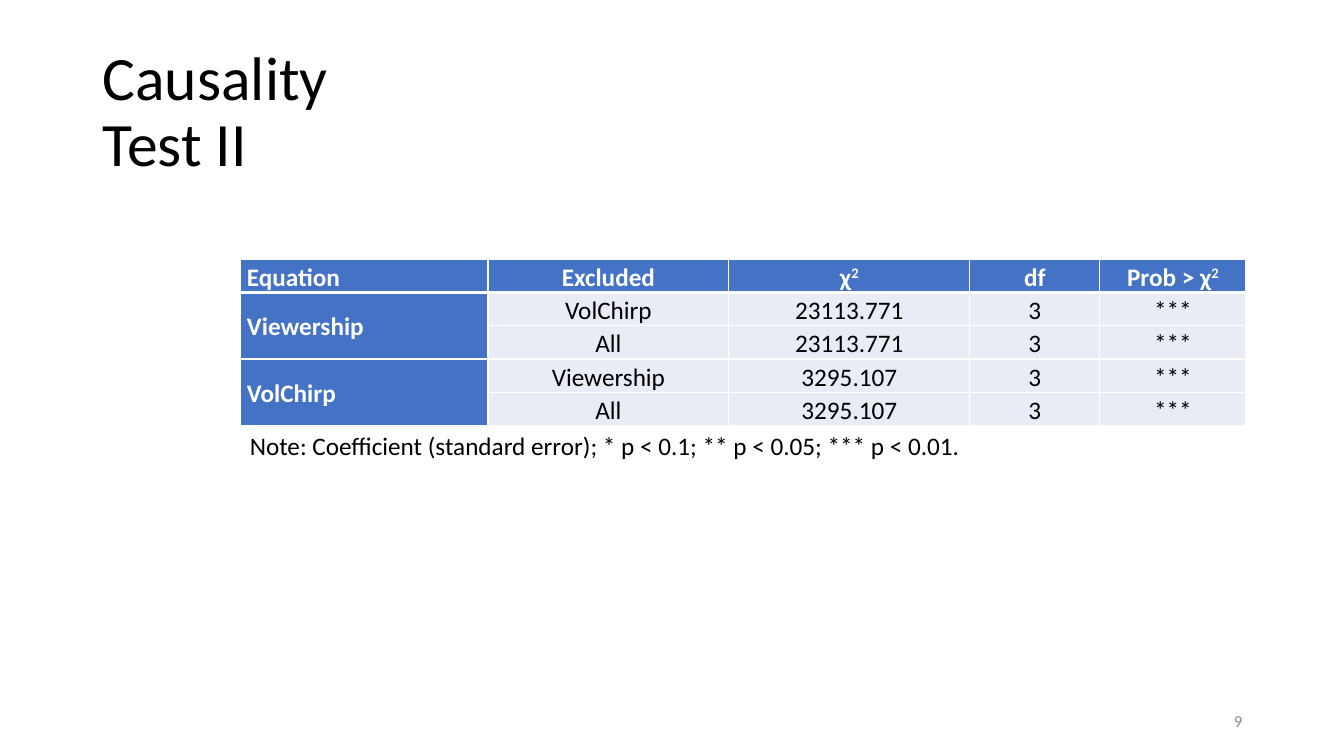
from dataclasses import dataclass

from lxml import etree
from pptx import Presentation
from pptx import util as u
from pptx.dml.color import RGBColor
from pptx.enum import text
from pptx.oxml import ns


@dataclass(frozen=True)
class Theme:
    font: str = "Calibri"
    ink: str = "000000"
    white: str = "FFFFFF"
    blue: str = "4472C4"
    pale: str = "E9EBF5"
    gray: str = "8C8C8C"
    title: int = 44
    body: int = 18
    small: int = 12


THEME = Theme()
WIDE, HIGH = u.Inches(13.33), u.Inches(7.5)
LEFT = 17.85
COLS = [2.46, 2.39, 2.39, 1.29, 1.45]
ROWS = [
    ["Equation", "Excluded", "χ^2", "df", "Prob > χ^2"],
    ["Viewership", "VolChirp", "23113.771", "3", "***"],
    ["", "All", "23113.771", "3", "***"],
    ["VolChirp", "Viewership", "3295.107", "3", "***"],
    ["", "All", "3295.107", "3", "***"],
]


def area(left, top, width, height):
    shares = zip((left, top, width, height), (WIDE, HIGH, WIDE, HIGH))
    return [round(side * share / 100) for share, side in shares]


def style(para, size, color, align="LEFT", bold=False):
    para.alignment = getattr(text.PP_ALIGN, align)
    font = para.font
    font.name, font.size, font.bold = THEME.font, u.Pt(size), bold
    font.color.rgb = RGBColor.from_string(color)


def label(slide, box, words, size, color, align="LEFT", anchor="MIDDLE", wrap=True):
    frame = slide.shapes.add_textbox(*area(*box)).text_frame
    frame.word_wrap = wrap
    frame.vertical_anchor = getattr(text.MSO_ANCHOR, anchor)
    para = frame.paragraphs[0]
    para.text = words
    style(para, size, color, align)
    return para


def border(cell, side, width):
    props = cell._tc.get_or_add_tcPr()
    line = etree.SubElement(props, ns.qn("a:ln" + side), w=str(u.Pt(width)))
    fill = etree.SubElement(line, ns.qn("a:solidFill"))
    etree.SubElement(fill, ns.qn("a:srgbClr"), val=THEME.white)


def write(cell, words, row, col):
    head = row == 0 or col == 0
    cell.margin_left = cell.margin_right = u.Inches(0.07)
    cell.margin_top = cell.margin_bottom = 0
    if row and col == 0:
        cell.vertical_anchor = text.MSO_ANCHOR.MIDDLE
    for side in "LRTB":
        thick = (row, side) in ((0, "B"), (1, "T"))
        border(cell, side, 3 if thick else 1)
    cell.fill.solid()
    cell.fill.fore_color.rgb = RGBColor.from_string(THEME.blue if head else THEME.pale)
    para = cell.text_frame.paragraphs[0]
    style(para, THEME.body, THEME.white if head else THEME.ink,
          "CENTER" if col else "LEFT", head)
    para.line_spacing = 1.1
    para.space_before = para.space_after = u.Pt(3)
    base, mark, power = words.partition("^")
    if base:
        para.add_run().text = base
    if mark:
        run = para.add_run()
        run.text = power
        run._r.get_or_add_rPr().set("baseline", "30000")


def grid(slide, box):
    table = slide.shapes.add_table(len(ROWS), len(COLS), *area(*box)).table
    for col, width in zip(table.columns, COLS):
        col.width = u.Inches(width)
    for r, row in enumerate(ROWS):
        for c, words in enumerate(row):
            write(table.cell(r, c), words, r, c)
    for top in (1, 3):
        table.cell(top, 0).merge(table.cell(top + 1, 0))


def main():
    deck = Presentation()
    deck.slide_width, deck.slide_height = WIDE, HIGH
    slide = deck.slides.add_slide(deck.slide_layouts[6])
    title = label(slide, (6.9, 5.33, 21.9, 19.33), "Causality Test II",
                  THEME.title, THEME.ink)
    title.line_spacing = 0.9
    label(slide, (LEFT, 56.27, 55.06, 5.33),
          "Note: Coefficient (standard error); * p < 0.1; ** p < 0.05; *** p < 0.01.",
          THEME.body, THEME.ink, anchor="TOP", wrap=False)
    grid(slide, (LEFT, 34.27, 74.9, 22))
    label(slide, (70.67, 92.67, 22.5, 5.33), "9", THEME.small, THEME.gray, "RIGHT")
    deck.save("out.pptx")


if __name__ == "__main__":
    main()
